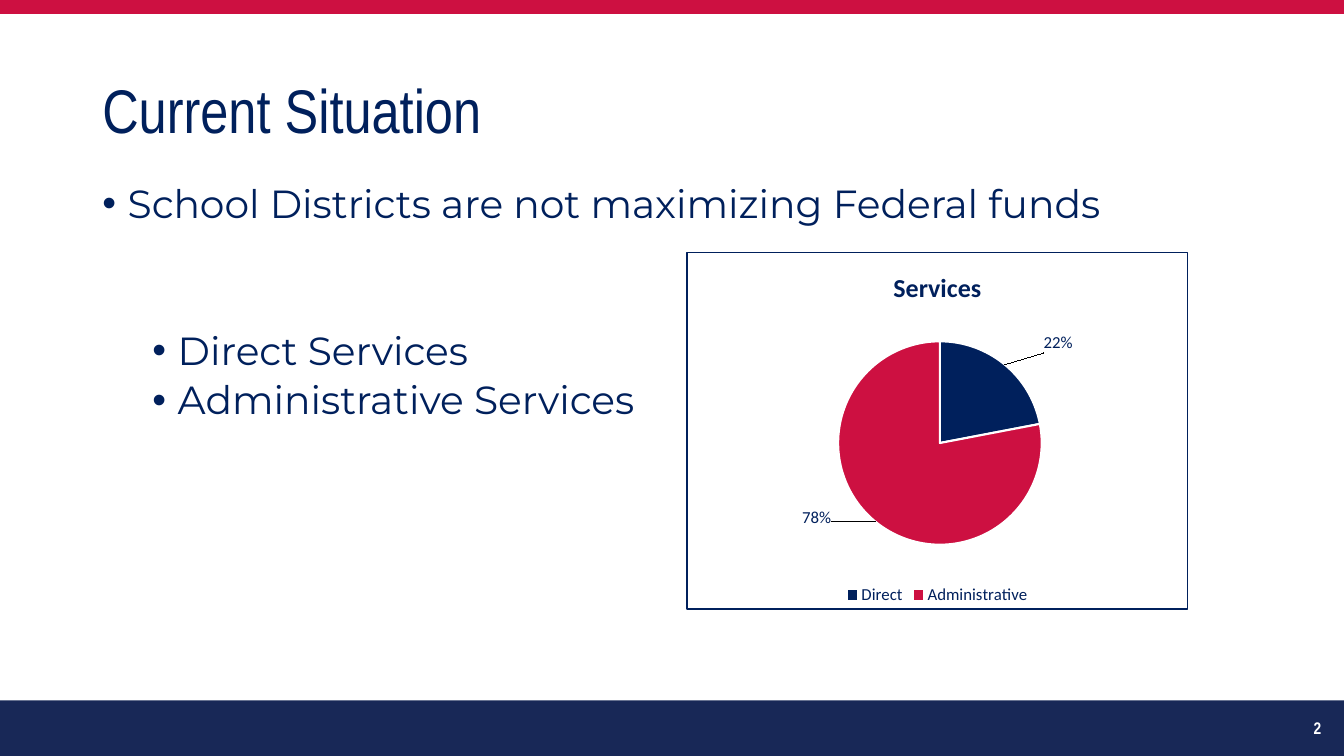
from pptx import Presentation
from pptx.chart.data import CategoryChartData
from pptx.dml.color import RGBColor
from pptx.enum.chart import XL_CHART_TYPE as ChartType, XL_LABEL_POSITION as LabelPosition
from pptx.enum.chart import XL_LEGEND_POSITION as LegendPosition
from pptx.enum.shapes import MSO_SHAPE as Shape
from pptx.enum.text import MSO_ANCHOR as Anchor, PP_ALIGN as Align
from pptx.oxml import parse_xml
from pptx.oxml.ns import nsdecls, qn
from pptx.util import Cm, Pt

NAVY = RGBColor(0x00, 0x20, 0x5C)
FOOTER_NAVY = RGBColor(0x18, 0x28, 0x57)
RED = RGBColor(0xCD, 0x10, 0x41)
WHITE = RGBColor(0xFF, 0xFF, 0xFF)
HEADING_FONT, BODY_FONT, CHART_FONT = "Arial Narrow", "Montserrat", "Calibri"

HEADING = "Current Situation"
PAGE_NUMBER = "2"
# text, left indent in cm, space before in points
BULLETS = [
    ("School Districts are not maximizing Federal funds", 0.64, 0),
    ("Direct Services", 1.9, 75),
    ("Administrative Services", 1.9, 5),
]
HANGING = 0.64
CHART_TITLE = "Services"
# category, value, colour, label offset as a share of the chart, label is boxed
SLICES = [
    ("Direct", 22, NAVY, (0.07, -0.02), False),
    ("Administrative", 78, RED, (-0.08, -0.05), True),
]
PIE_AREA = {"x": 0.3, "y": 0.25, "w": 0.41, "h": 0.57}

WIDTH, HEIGHT = 33.87, 19.05
TOP_BAR, BOTTOM_BAR = 0.35, 1.4
MARGIN = 2.33


def style(font, name, size, color=NAVY, bold=False):
    font.name, font.size, font.bold = name, Pt(size), bold
    font.color.rgb = color


def add_bar(slide, top, height, color):
    bar = slide.shapes.add_shape(Shape.RECTANGLE, 0, Cm(top), Cm(WIDTH), Cm(height))
    bar.shadow.inherit = False
    bar.fill.solid()
    bar.fill.fore_color.rgb = color
    bar.line.fill.background()


def add_text_frame(slide, left, top, width, height, anchor=Anchor.MIDDLE):
    frame = slide.shapes.add_textbox(Cm(left), Cm(top), Cm(width), Cm(height)).text_frame
    frame.word_wrap = True
    frame.vertical_anchor = anchor
    return frame


def add_run(paragraph, text, *font):
    run = paragraph.add_run()
    run.text = text
    style(run.font, *font)


def add_bullets(slide):
    frame = add_text_frame(slide, MARGIN, 4.52, 29.21, 12.09, Anchor.TOP)
    for number, (text, indent, space) in enumerate(BULLETS):
        paragraph = frame.add_paragraph() if number else frame.paragraphs[0]
        paragraph.line_spacing = 0.9
        paragraph.space_before = Pt(space)
        properties = paragraph._p.get_or_add_pPr()
        properties.set("marL", str(Cm(indent)))
        properties.set("indent", str(-Cm(HANGING)))
        properties.append(parse_xml(f'<a:buFont {nsdecls("a")} typeface="Arial"/>'))
        properties.append(parse_xml(f'<a:buChar {nsdecls("a")} char="•"/>'))
        add_run(paragraph, text, BODY_FONT, 28)


def outline():
    return parse_xml(
        f'<c:spPr {nsdecls("c", "a")}><a:noFill/><a:ln w="{Pt(0.75)}"><a:solidFill>'
        f'<a:srgbClr val="{NAVY}"/></a:solidFill></a:ln></c:spPr>')


def manual_layout(inner=False, **shares):
    target = '<c:layoutTarget val="inner"/>' if inner else ""
    modes = '<c:xMode val="edge"/><c:yMode val="edge"/>' if inner else ""
    values = "".join(f'<c:{key} val="{value}"/>' for key, value in shares.items())
    return parse_xml(f'<c:layout {nsdecls("c")}><c:manualLayout>{target}{modes}{values}'
                     '</c:manualLayout></c:layout>')


def place_percent_label(label, offset, boxed):
    """Show the percentage only, moved from its usual place outside the slice."""
    x, y = offset
    parts = [manual_layout(x=x, y=y),
             parse_xml(f'<c:numFmt {nsdecls("c")} formatCode="0%" sourceLinked="0"/>')]
    if boxed:
        parts.append(outline())
    for position, part in enumerate(parts, 1):
        label.insert(position, part)
    label.find(qn("c:showVal")).set("val", "0")
    label.find(qn("c:showPercent")).set("val", "1")


def add_services_chart(slide):
    data = CategoryChartData()
    data.categories = [name for name, *_ in SLICES]
    data.add_series(CHART_TITLE, [value for _, value, *_ in SLICES])
    chart = slide.shapes.add_chart(
        ChartType.PIE, Cm(17.3), Cm(6.34), Cm(12.65), Cm(9.02), data).chart
    style(chart.font, CHART_FONT, 12)
    chart.has_title = True
    add_run(chart.chart_title.text_frame.paragraphs[0], CHART_TITLE, CHART_FONT, 18.6, NAVY, True)
    chart.chart_title.include_in_layout = False
    chart.has_legend = True
    chart.legend.position = LegendPosition.BOTTOM
    chart.legend.include_in_layout = False
    style(chart.legend.font, CHART_FONT, 12)

    pie = chart.plots[0]
    pie.vary_by_categories = True
    for number, (_, _, color, offset, boxed) in enumerate(SLICES):
        point = pie.series[0].points[number]
        point.format.fill.solid()
        point.format.fill.fore_color.rgb = color
        point.format.line.color.rgb = WHITE
        point.format.line.width = Pt(1.5)
        style(point.data_label.font, CHART_FONT, 12)
        point.data_label.position = LabelPosition.OUTSIDE_END
        label = chart._chartSpace.xpath(".//c:dLbl")[number]
        place_percent_label(label, offset, boxed)

    plot_area = chart._chartSpace.find(".//" + qn("c:plotArea"))
    for layout in plot_area.findall(qn("c:layout")):
        plot_area.remove(layout)
    plot_area.insert(0, manual_layout(inner=True, **PIE_AREA))
    chart._chartSpace.find(qn("c:chart")).addnext(outline())


def main():
    deck = Presentation()
    deck.slide_width, deck.slide_height = Cm(WIDTH), Cm(HEIGHT)
    slide = deck.slides.add_slide(deck.slide_layouts[6])

    add_bar(slide, HEIGHT - BOTTOM_BAR, BOTTOM_BAR, FOOTER_NAVY)
    add_bar(slide, 0, TOP_BAR, RED)

    heading = add_text_frame(slide, MARGIN, 1.01, 29.21, 3.68).paragraphs[0]
    heading.line_spacing = 0.9
    add_run(heading, HEADING, HEADING_FONT, 44)

    add_bullets(slide)

    page = add_text_frame(slide, 25.93, 17.83, 7.62, 1.01).paragraphs[0]
    page.alignment = Align.RIGHT
    add_run(page, PAGE_NUMBER, HEADING_FONT, 12, WHITE, True)

    add_services_chart(slide)
    deck.save("out.pptx")


if __name__ == "__main__":
    main()
